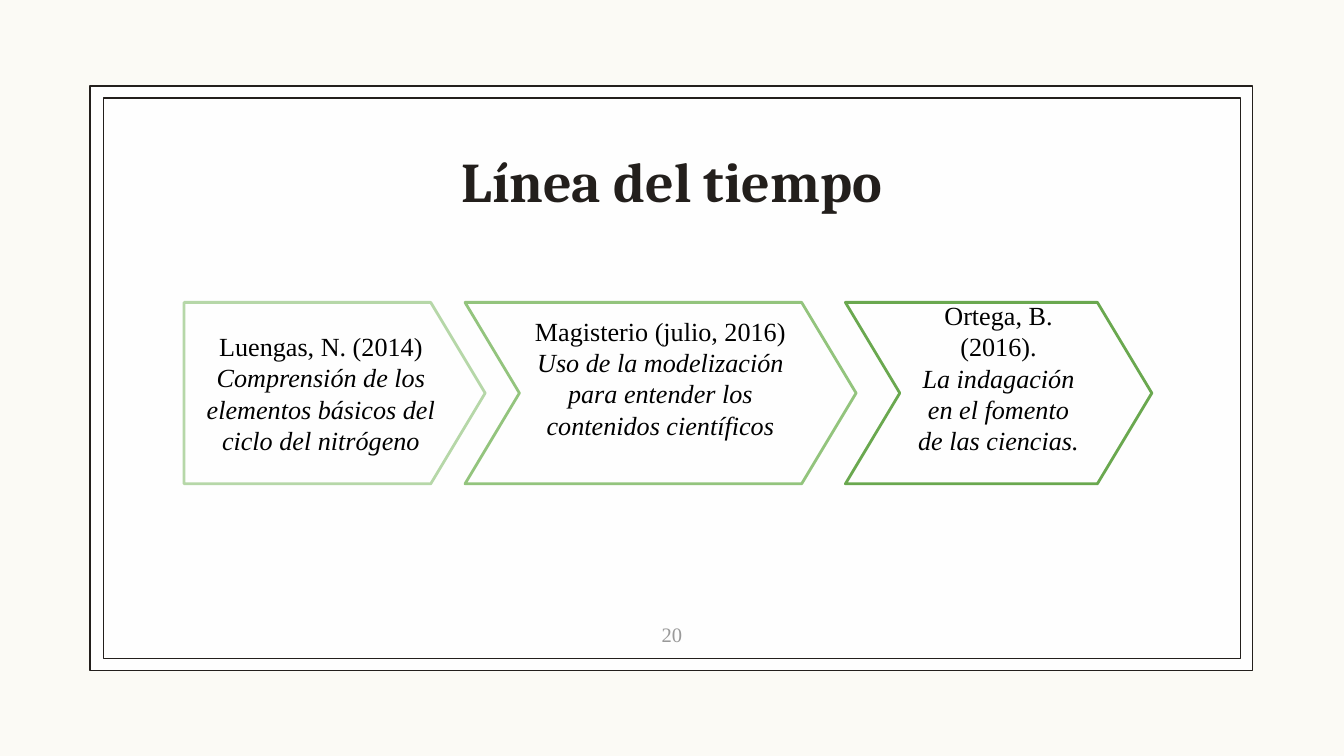
from lxml.etree import SubElement
from pptx import Presentation
from pptx.dml.color import RGBColor
from pptx.enum.shapes import MSO_SHAPE
from pptx.enum.text import MSO_ANCHOR, MSO_AUTO_SIZE, PP_ALIGN
from pptx.oxml.ns import qn
from pptx.util import Inches, Pt

TITLE = "Línea del tiempo"
PAGE = "20"
STEPS = [
    dict(kind=MSO_SHAPE.PENTAGON, left=1.37, width=2.24, line="B6D7A8", foot=0.1,
         head="Luengas, N. (2014)",
         work="Comprensión de los elementos básicos del ciclo del nitrógeno"),
    dict(kind=MSO_SHAPE.CHEVRON, left=3.46, width=2.91, line="93C47D", foot=0.33,
         head="Magisterio (julio, 2016)",
         work="Uso de la modelización para entender los contenidos científicos"),
    dict(kind=MSO_SHAPE.CHEVRON, left=6.29, width=2.28, line="6AA84F", foot=0.33,
         head="Ortega, B. (2016).",
         work="La indagación en el fomento de las ciencias."),
]
FRAMES = [((0.67, 0.64, 8.65, 4.35), True), ((0.77, 0.73, 8.46, 4.17), False)]
WIDE = 10
TOP, HIGH, POINT, PAD = 2.25, 1.35, 0.3, 0.1

THEME = dict(
    back="FBFAF5", panel="FFFFFF", edge="231F1C", alpha="93000",
    title=dict(name="Cambria", size=Pt(30), bold=True, color="231F1C"),
    text=dict(name="Times New Roman", size=Pt(14), color="000000"),
    page=dict(name="Times New Roman", size=Pt(11), color="999999"),
)


def paint(font, style):
    for key, value in style.items():
        if key == "color":
            font.color.rgb = RGBColor.from_string(value)
        else:
            setattr(font, key, value)


def write(shape, rows, anchor, foot=PAD):
    frame = shape.text_frame
    form = dict(word_wrap=True, auto_size=MSO_AUTO_SIZE.NONE, vertical_anchor=anchor,
                margin_left=Inches(PAD), margin_right=Inches(PAD),
                margin_top=Inches(PAD), margin_bottom=Inches(foot))
    for key, value in form.items():
        setattr(frame, key, value)
    for i, (text, style) in enumerate(rows):
        para = frame.add_paragraph() if i else frame.paragraphs[0]
        para.alignment = PP_ALIGN.CENTER
        run = para.add_run()
        run.text = text
        paint(run.font, style)


def draw(kind, box, color, width):
    shape = slide.shapes.add_shape(kind, *map(Inches, box))
    shape.shadow.inherit = False
    shape.fill.background()
    shape.line.color.rgb = RGBColor.from_string(color)
    shape.line.width = Pt(width)
    return shape


deck = Presentation()
deck.slide_width, deck.slide_height = Inches(WIDE), Inches(WIDE * 9 / 16)
slide = deck.slides.add_slide(deck.slide_layouts[5])
slide.background.fill.solid()
slide.background.fill.fore_color.rgb = RGBColor.from_string(THEME["back"])

for box, full in FRAMES:
    panel = draw(MSO_SHAPE.RECTANGLE, box, THEME["edge"], 0.75)
    if full:
        panel.fill.solid()
        panel.fill.fore_color.rgb = RGBColor.from_string(THEME["panel"])
        tint = panel.fill._xPr.find(qn("a:solidFill"))[0]
        SubElement(tint, qn("a:alpha"), val=THEME["alpha"])

title = slide.shapes.title
slide.shapes._spTree.append(title._element)
title.left, title.top, title.width, title.height = map(Inches, (1.37, 1.14, 7.26, 0.55))
write(title, [(TITLE, THEME["title"])], MSO_ANCHOR.BOTTOM)

for step in STEPS:
    arrow = draw(step["kind"], (step["left"], TOP, step["width"], HIGH), step["line"], 1.5)
    arrow.adjustments[0] = POINT
    rows = [(step["head"], THEME["text"]), (step["work"], THEME["text"] | dict(italic=True))]
    write(arrow, rows, MSO_ANCHOR.MIDDLE, step["foot"])

page = slide.shapes.add_textbox(*map(Inches, (4.7, 4.53, 0.6, 0.27)))
write(page, [(PAGE, THEME["page"])], MSO_ANCHOR.TOP)

deck.save("out.pptx")
